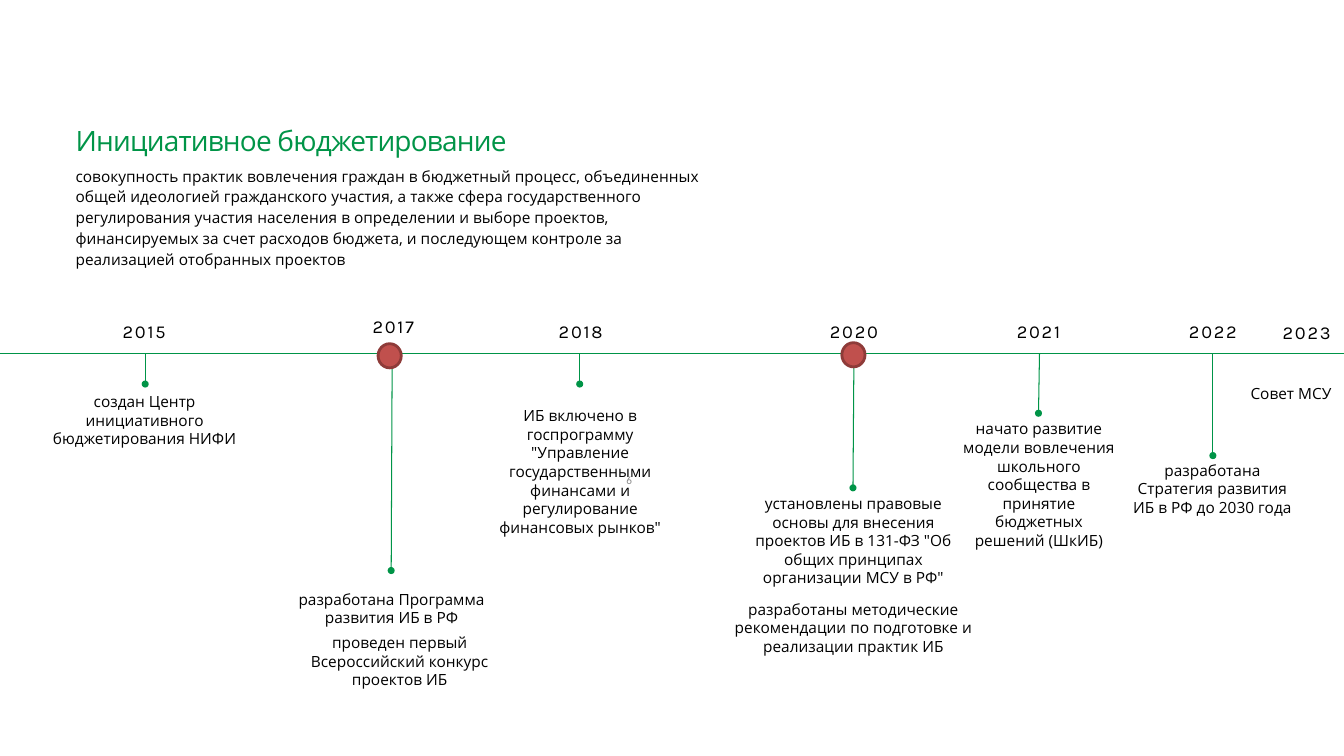
from lxml import etree
from pptx import Presentation
from pptx import util as u
from pptx.dml.color import RGBColor
from pptx.enum import shapes, text
from pptx.oxml.ns import qn

GREEN = RGBColor(0x00, 0x94, 0x47)
BLACK = RGBColor(0x00, 0x00, 0x00)
GREY = RGBColor(0x8C, 0x8C, 0x8C)
RED = RGBColor(0xC0, 0x50, 0x4D)
WINE = RGBColor(0x8E, 0x3B, 0x39)

PX = 9144  # 100 px to the inch
WIDE, HIGH = 1333, 750
AXIS = 351
DOT = 7

TITLE = "Инициативное бюджетирование"
INTRO = (
    "совокупность практик вовлечения граждан в бюджетный процесс, "
    "объединенных общей идеологией гражданского участия, а также сфера "
    "государственного регулирования участия населения в определении и выборе "
    "проектов, финансируемых за счет расходов бюджета, и последующем контроле "
    "за реализацией отобранных проектов"
)

# year, centre x, top
YEARS = [
    ("2015", 143, 319), ("2017", 390, 314), ("2018", 576, 319),
    ("2020", 847, 319), ("2021", 1030, 319), ("2022", 1203, 319),
    ("2023", 1296, 320),
]

# x on the axis, x of the dot, y of the dot
STEMS = [
    (144, 144, 381), (389, 388, 566), (575, 575, 381),
    (847, 846, 484), (1031, 1030, 410), (1203, 1203, 452),
]

# left, top of the red marks
MARKS = [(375, 341), (835, 340)]

# left, top, width, height, text
NOTES = [
    (42, 389, 203, 56, "создан Центр инициативного бюджетирования НИФИ"),
    (287, 585, 203, 37, "разработана Программа развития ИБ в РФ"),
    (295, 628, 203, 56, "проведен первый Всероссийский конкурс проектов ИБ"),
    (474, 403, 203, 112, "ИБ включено в госпрограмму \"Управление "
     "государственными финансами и регулирование финансовых рынков\""),
    (745, 490, 203, 93, "установлены правовые основы для внесения проектов "
     "ИБ в 131-ФЗ \"Об общих принципах организации МСУ в РФ\""),
    (721, 595, 251, 56, "разработаны методические рекомендации по подготовке "
     "и реализации практик ИБ"),
    (952, 416, 157, 112, "начато развитие модели вовлечения школьного "
     "сообщества в принятие бюджетных решений (ШкИБ)"),
    (1117, 457, 171, 56, "разработана Стратегия развития ИБ в РФ до 2030 года"),
    (1195, 381, 171, 19, "Совет МСУ"),
]

deck = Presentation()
deck.slide_width, deck.slide_height = WIDE * PX, HIGH * PX
slide = deck.slides.add_slide(deck.slide_layouts[6])


def write(words, x, y, w, h, size=11, font="Open Sans", color=BLACK,
          align=text.PP_ALIGN.LEFT, lead=None, track=0, pad=(0, 0),
          anchor=text.MSO_ANCHOR.TOP):
    box = slide.shapes.add_textbox(x * PX, y * PX, w * PX, h * PX)
    frame = box.text_frame
    frame.word_wrap = True
    frame.vertical_anchor = anchor
    frame.margin_left = frame.margin_right = pad[0] * PX
    frame.margin_top = frame.margin_bottom = pad[1] * PX
    para = frame.paragraphs[0]
    para.alignment = align
    if lead:
        para.line_spacing = u.Pt(lead)
    run = para.add_run()
    run.text = words
    run.font.size = u.Pt(size)
    run.font.name = font
    run.font.color.rgb = color
    if track:
        run.font._element.set("spc", str(round(track * 100)))


def rule(x1, y1, x2, y2):
    line = slide.shapes.add_connector(
        shapes.MSO_CONNECTOR.STRAIGHT, x1 * PX, y1 * PX, x2 * PX, y2 * PX)
    line.line.color.rgb = GREEN
    line.line.width = u.Pt(0.75)
    etree.SubElement(line._element.spPr, qn("a:effectLst"))


def disc(x, y, w, h, fill, edge=None):
    oval = slide.shapes.add_shape(
        shapes.MSO_SHAPE.OVAL, round(x * PX), round(y * PX), w * PX, h * PX)
    oval.shadow.inherit = False
    oval.fill.solid()
    oval.fill.fore_color.rgb = fill
    if edge:
        oval.line.color.rgb = edge
        oval.line.width = u.Pt(2)
    else:
        oval.line.fill.background()


# Heading
write(TITLE, 75, 125, 539, 31, size=20, color=GREEN, lead=22, track=-0.6)
write(INTRO, 75, 163, 630, 84, lead=14.9)

# Axis with stems and dots
rule(0, AXIS, WIDE, AXIS)
for top, x, y in STEMS:
    rule(x, y, top, AXIS)
    disc(x - DOT / 2, y - DOT / 2, DOT, DOT, GREEN)

# Years and notes
for year, mid, y in YEARS:
    write(year, mid - 53, y, 106, 21, size=13, font="Karla",
          align=text.PP_ALIGN.CENTER, lead=14.7, track=1.3)
for x, y, w, h, note in NOTES:
    write(note, x, y, w, h, align=text.PP_ALIGN.CENTER, lead=13.3)

# Red marks
for x, y in MARKS:
    disc(x, y, 23, 24, RED, edge=WINE)

# Page number
write("6", 478, 463, 156, 27, size=8, font="Calibri", color=GREY,
      align=text.PP_ALIGN.RIGHT, pad=(7, 3), anchor=text.MSO_ANCHOR.MIDDLE)

deck.save("out.pptx")
